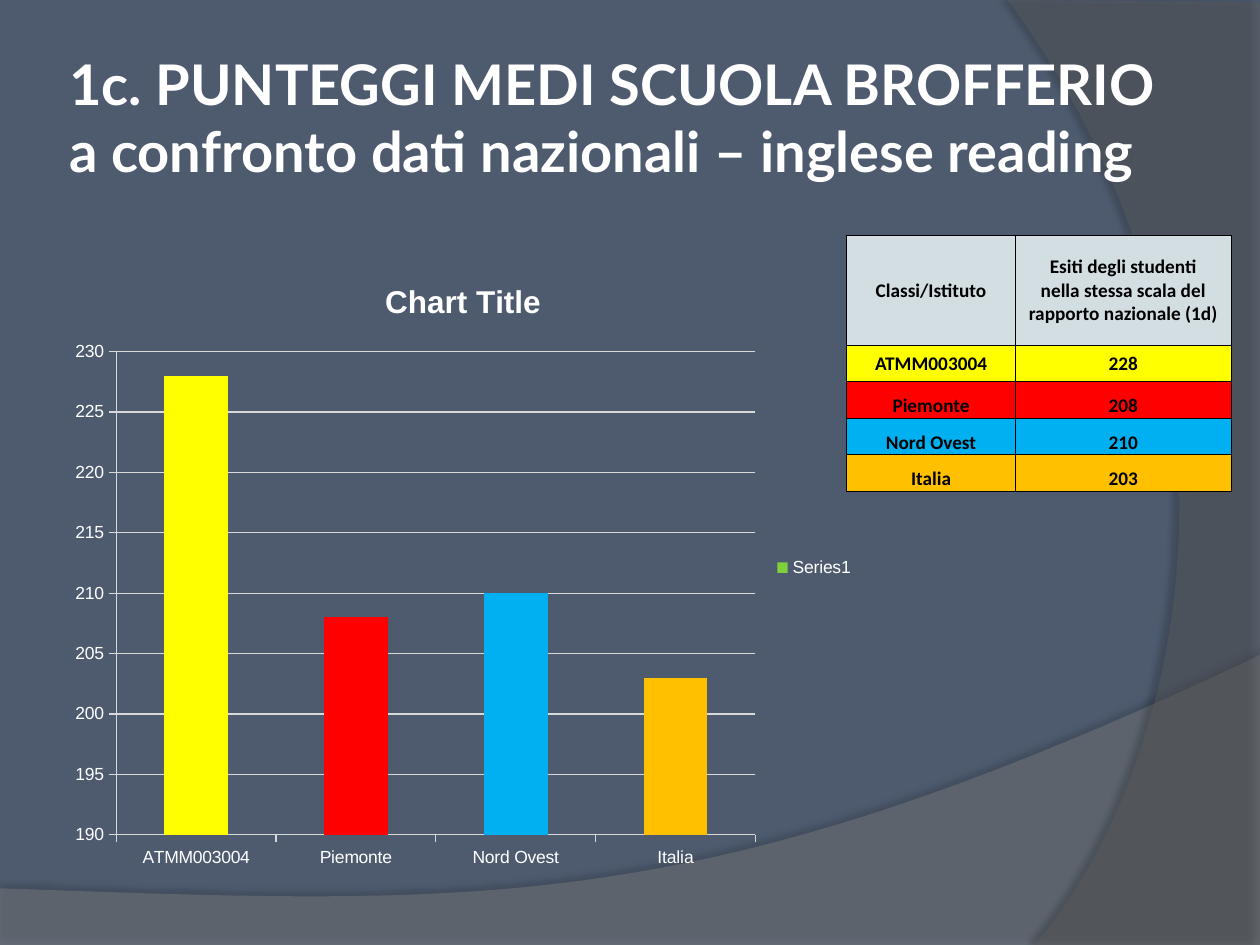
from lxml import etree
from pptx import Presentation
from pptx.chart.data import CategoryChartData
from pptx.dml.color import RGBColor
from pptx.enum.chart import XL_CHART_TYPE, XL_LEGEND_POSITION, XL_TICK_MARK
from pptx.enum.text import MSO_ANCHOR, PP_ALIGN
from pptx.oxml.ns import qn
from pptx.util import Inches, Pt

COLUMN = XL_CHART_TYPE.COLUMN_CLUSTERED
RIGHT = XL_LEGEND_POSITION.RIGHT
OUTSIDE = XL_TICK_MARK.OUTSIDE
MIDDLE, BOTTOM = MSO_ANCHOR.MIDDLE, MSO_ANCHOR.BOTTOM
LEFT, CENTER = PP_ALIGN.LEFT, PP_ALIGN.CENTER

COLORS = {
    "background": "4E5B6F", "wave": "7F7F7F", "arc": "5E5E5E",
    "white": "FFFFFF", "black": "000000", "header": "D3DEE2",
    "grid": "D9D9D9", "series": "7FD13B", "school": "FFFF00",
    "region": "FF0000", "area": "00B0F0", "country": "FFC000",
}
RESULTS = [
    ("ATMM003004", 228, "school", MIDDLE),
    ("Piemonte", 208, "region", BOTTOM),
    ("Nord Ovest", 210, "area", BOTTOM),
    ("Italia", 203, "country", BOTTOM),
]
HEADER = ("Classi/Istituto",
          "Esiti degli studenti\vnella stessa scala del\vrapporto nazionale (1d)")
TITLE = ("1c. PUNTEGGI MEDI SCUOLA BROFFERIO\v"
         "a confronto dati nazionali – inglese reading")


def rgb(name):
    return RGBColor.from_string(COLORS[name])


def paint(fill, name):
    fill.solid()
    fill.fore_color.rgb = rgb(name)


def add_node(parent, tag, **values):
    node = etree.SubElement(parent, qn(tag))
    for key, value in values.items():
        node.set(key, str(value))
    return node


def curve(start, first, second, end, steps=40):
    for step in range(1, steps + 1):
        t = step / steps
        weights = ((1 - t) ** 3, 3 * t * (1 - t) ** 2, 3 * t * t * (1 - t), t ** 3)
        yield tuple(sum(w * point[axis] for w, point in
                        zip(weights, (start, first, second, end))) for axis in (0, 1))


class SlideBuilder:
    columns, rows = 100, 75

    def __init__(self, deck):
        self.column = deck.slide_width / self.columns
        self.row = deck.slide_height / self.rows
        self.page = deck.slides.add_slide(deck.slide_layouts[6])
        paint(self.page.background.fill, "background")

    def place(self, left, top, width, height):
        return (round(left * self.column), round(top * self.row),
                round(width * self.column), round(height * self.row))

    def style(self, font, face, size, color, bold=False):
        for key, value in {"name": face, "size": Pt(size), "bold": bold}.items():
            setattr(font, key, value)
        font.color.rgb = rgb(color)

    def fill_text(self, frame, text, align, **look):
        para = frame.paragraphs[0]
        para.text = text
        para.alignment = align
        for span in para.runs:
            self.style(span.font, **look)

    def outline(self, points, color, opacity, shade, distance, angle):
        spots = [(round(x * self.column), round(y * self.row)) for x, y in points]
        builder = self.page.shapes.build_freeform(*spots[0], scale=1.0)
        builder.add_line_segments(spots[1:], close=True)
        shape = builder.convert_to_shape()
        paint(shape.fill, color)
        shape.line.fill.background()
        shape.shadow.inherit = False
        properties = shape.element.spPr
        tint = properties.find(qn("a:solidFill"))[0]
        add_node(tint, "a:alpha", val=opacity * 1000)
        shadow = add_node(properties.find(qn("a:effectLst")), "a:outerShdw",
                          blurRad=Pt(4), dist=Pt(distance), dir=angle * 60000,
                          algn="ctr", rotWithShape=0)
        tint = add_node(shadow, "a:srgbClr", val=COLORS["black"])
        add_node(tint, "a:alpha", val=shade * 1000)

    def text(self, text, area, **look):
        frame = self.page.shapes.add_textbox(*self.place(*area)).text_frame
        formats = {"word_wrap": True, "vertical_anchor": MIDDLE}
        formats.update({f"margin_{side}": Inches(0.05)
                        for side in ("left", "top", "right", "bottom")})
        for key, value in formats.items():
            setattr(frame, key, value)
        self.fill_text(frame, text, LEFT, **look)

    def cell(self, cell, text, color, anchor):
        for side in ("left", "top", "right", "bottom"):
            setattr(cell, f"margin_{side}", 0)
        cell.vertical_anchor = anchor
        self.fill_text(cell.text_frame, text, CENTER,
                       face="Calibri", size=11, color="black", bold=True)
        properties = cell._tc.get_or_add_tcPr()
        for tag in ("a:lnL", "a:lnR", "a:lnT", "a:lnB"):
            line = add_node(properties, tag, w=Pt(0.5))
            add_node(add_node(line, "a:solidFill"), "a:srgbClr", val=COLORS["black"])
        paint(cell.fill, color)

    def table(self, records, area, widths, heights):
        table = self.page.shapes.add_table(
            len(records), len(widths), *self.place(*area)).table
        for column, width in zip(table.columns, widths):
            column.width = round(width * self.column)
        for index, (texts, color, anchor) in enumerate(records):
            table.rows[index].height = round(heights[index] * self.row)
            for position, text in enumerate(texts):
                self.cell(table.cell(index, position), text, color, anchor)

    def chart(self, title, series_name, results, area):
        data = CategoryChartData()
        data.categories = [result[0] for result in results]
        data.add_series(series_name, [result[1] for result in results])
        chart = self.page.shapes.add_chart(COLUMN, *self.place(*area), data).chart
        self.style(chart.font, "Arial", 10, "white")
        chart.has_title = True
        self.fill_text(chart.chart_title.text_frame, title, CENTER,
                       face="Arial", size=18, color="white", bold=True)
        chart.chart_title.include_in_layout = False
        chart.has_legend = True
        chart.legend.position = RIGHT
        chart.legend.include_in_layout = False
        for axis in (chart.category_axis, chart.value_axis):
            axis.major_tick_mark = OUTSIDE
            axis.format.line.color.rgb = rgb("grid")
        scale = chart.value_axis
        for key, value in {"minimum_scale": 190, "maximum_scale": 230,
                           "major_unit": 5, "has_major_gridlines": True}.items():
            setattr(scale, key, value)
        scale.major_gridlines.format.line.color.rgb = rgb("grid")
        scale.tick_labels.number_format = "0"
        scale.tick_labels.number_format_is_linked = False
        plot = chart.plots[0]
        plot.gap_width = 150
        plot.vary_by_categories = False
        series = plot.series[0]
        paint(series.format.fill, "series")
        for index, result in enumerate(results):
            paint(series.points[index].format.fill, result[2])


def main():
    deck = Presentation()
    deck.slide_width, deck.slide_height = Inches(10), Inches(7.5)
    slide = SlideBuilder(deck)
    wave = [(0, 70.5), (0, 75), (100, 75), (100, 52),
            *curve((100, 52), (55.9, 72.9), (39.1, 71.9), (0, 70.5))]
    arc = [(100, 0.2), (100, 75), (82.1, 75),
           *curve((82.1, 75), (93.5, 61.9), (101.8, 30), (80, 0))]
    slide.outline(wave, "wave", 45, shade=35, distance=3.5, angle=270)
    slide.outline(arc, "arc", 40, shade=45, distance=4, angle=180)
    slide.text(TITLE, (5, 3, 93.4, 12.5), face="Lato", size=32, color="white", bold=True)
    records = [(HEADER, "header", MIDDLE)]
    records += [((name, str(score)), color, anchor)
                for name, score, color, anchor in RESULTS]
    slide.table(records, (67.2, 18.7, 30.5, 20.3), (13.4, 17.1),
                [8.7] + [2.9] * len(RESULTS))
    slide.chart("Chart Title", "Series1", RESULTS, (4.7, 20.3, 64.1, 49.5))
    deck.save("out.pptx")


if __name__ == "__main__":
    main()
